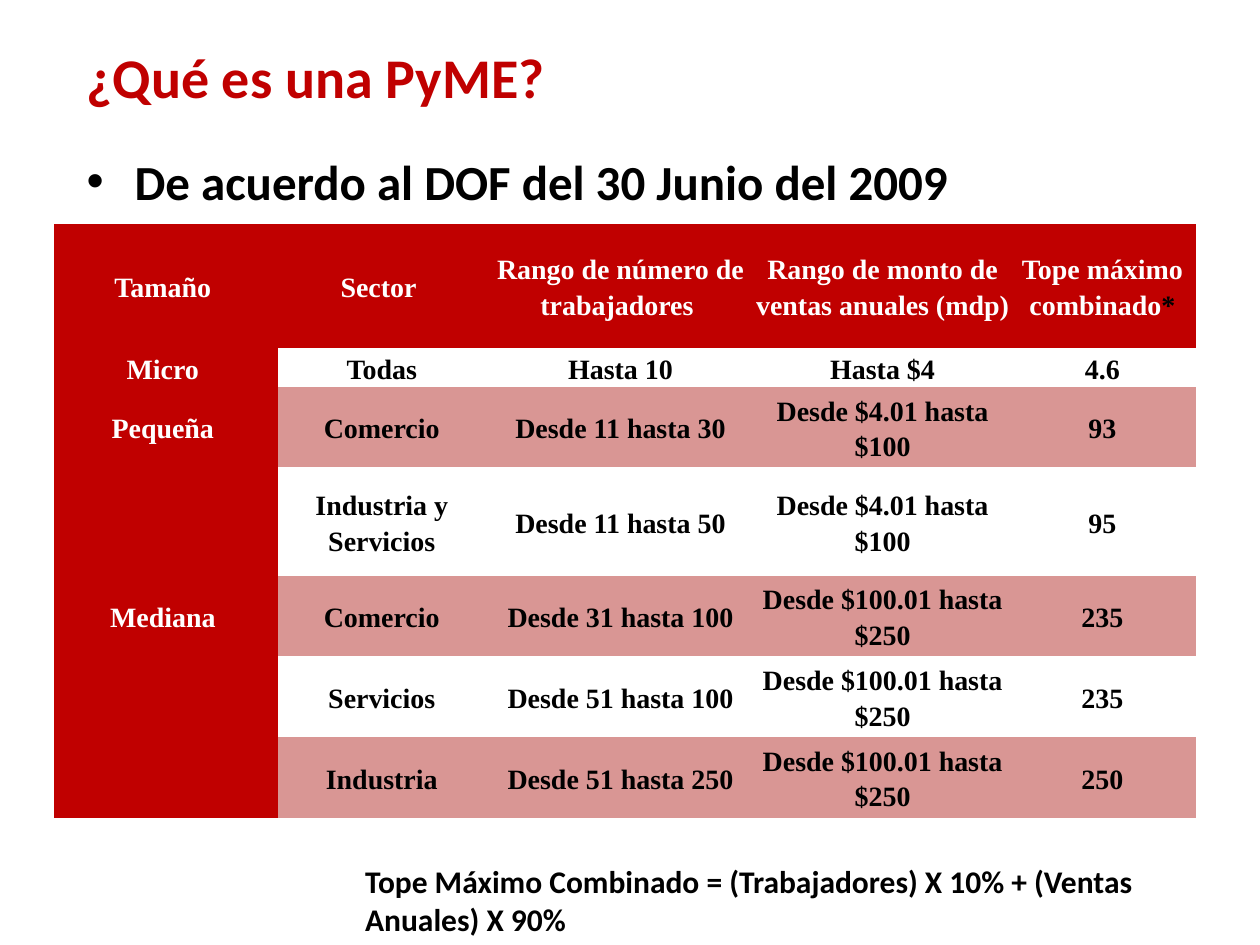
from lxml import etree
from pptx import Presentation
from pptx.dml.color import RGBColor
from pptx.enum.text import MSO_ANCHOR, MSO_AUTO_SIZE, PP_ALIGN
from pptx.oxml.ns import qn
from pptx.util import Inches, Pt

CENTER, MIDDLE = PP_ALIGN.CENTER, MSO_ANCHOR.MIDDLE
GROW = MSO_AUTO_SIZE.SHAPE_TO_FIT_TEXT
RED, PINK, WHITE, BLACK = "C00000", "D99694", "FFFFFF", "000000"
PLAIN = "{2D5ABB26-0587-4C30-8999-92F81FD0307C}"  # no style, no grid

COLS = [1.78, 1.64, 2.15, 2.01, 1.48]
ROWS = [0.98, 0.31, 0.64, 0.86, 0.64, 0.64, 0.64]
DATA = [
    ["Tamaño ", "Sector ", "Rango de número de trabajadores ",
     "Rango de monto de ventas anuales (mdp) ", "Tope máximo combinado"],
    ["Micro ", "Todas", "Hasta 10", "Hasta $4", "4.6"],
    ["Pequeña ", "Comercio", "Desde 11 hasta 30", "Desde $4.01 hasta $100", "93"],
    ["", "Industria y Servicios", "Desde 11 hasta 50", "Desde $4.01 hasta $100", "95"],
    ["Mediana ", "Comercio", "Desde 31 hasta 100", "Desde $100.01 hasta $250", "235"],
    ["", "Servicios", "Desde 51 hasta 100", "Desde $100.01 hasta $250", "235"],
    ["", "Industria", "Desde 51 hasta 250", "Desde $100.01 hasta $250", "250"],
]


def paint(color, tone):
    color.rgb = RGBColor.from_string(tone)


def style(font, size, tone, name="Calibri"):
    for key, value in {"name": name, "size": Pt(size), "bold": True}.items():
        setattr(font, key, value)
    paint(font.color, tone)


def add_text(slide, box, text, size, tone, wrap=True, grow=True):
    frame = slide.shapes.add_textbox(*map(Inches, box)).text_frame
    frame.word_wrap = wrap
    if grow:
        frame.auto_size = GROW
    para = frame.paragraphs[0]
    run = para.add_run()
    run.text = text
    style(run.font, size, tone)
    return para


def add_bullet(slide, box, text):
    para = add_text(slide, box, text, 28, BLACK, grow=False)
    props = para._p.get_or_add_pPr()
    props.set("marL", str(Inches(0.38)))
    props.set("indent", str(Inches(-0.38)))
    etree.SubElement(props, qn("a:buFont")).set("typeface", "Arial")
    etree.SubElement(props, qn("a:buChar")).set("char", "•")


def fill_cell(cell, text, back, tone):
    for side in ("left", "right", "top", "bottom"):
        setattr(cell, "margin_" + side, 0)
    cell.vertical_anchor = MIDDLE
    if back:
        cell.fill.solid()
        paint(cell.fill.fore_color, back)
    else:
        cell.fill.background()
    para = cell.text_frame.paragraphs[0]
    para.alignment, para.line_spacing = CENTER, 1.15
    style(para.font, 16, tone, "Times New Roman")
    if text:
        add_run(para, text, tone)


def add_run(para, text, tone):
    run = para.add_run()
    run.text = text
    style(run.font, 16, tone, "Times New Roman")


def add_grid(slide, box):
    frame = slide.shapes.add_table(len(ROWS), len(COLS), *map(Inches, box))
    table = frame.table
    table.first_row = table.horz_banding = False
    table._tbl.tblPr.find(qn("a:tableStyleId")).text = PLAIN
    for col, width in zip(table.columns, COLS):
        col.width = Inches(width)
    for r, (high, texts) in enumerate(zip(ROWS, DATA)):
        table.rows[r].height = Inches(high)
        for c, text in enumerate(texts):
            head = r == 0 or c == 0
            back = RED if head else PINK if r % 2 == 0 else None
            fill_cell(table.cell(r, c), text, back, WHITE if head else BLACK)
    # Footnote mark in the last heading
    add_run(table.cell(0, len(COLS) - 1).text_frame.paragraphs[0], "*", BLACK)


def main():
    deck = Presentation()
    deck.slide_width, deck.slide_height = Inches(10), Inches(7.5)
    slide = deck.slides.add_slide(deck.slide_layouts[6])
    # Heading and bullet
    add_text(slide, (0.59, 0.29, 3.87, 0.64), "¿Qué es una PyME?", 32, RED, wrap=False)
    add_bullet(slide, (0.59, 1.15, 9, 4.95), "De acuerdo al DOF del 30 Junio del 2009")
    # Size classes
    add_grid(slide, (0.43, 1.78, sum(COLS), sum(ROWS)))
    # Formula
    add_text(slide, (2.8, 6.79, 6.93, 0.71),
             "Tope Máximo Combinado = (Trabajadores) X 10% + (Ventas Anuales) X 90%",
             18, BLACK)
    deck.save("out.pptx")


if __name__ == "__main__":
    main()
